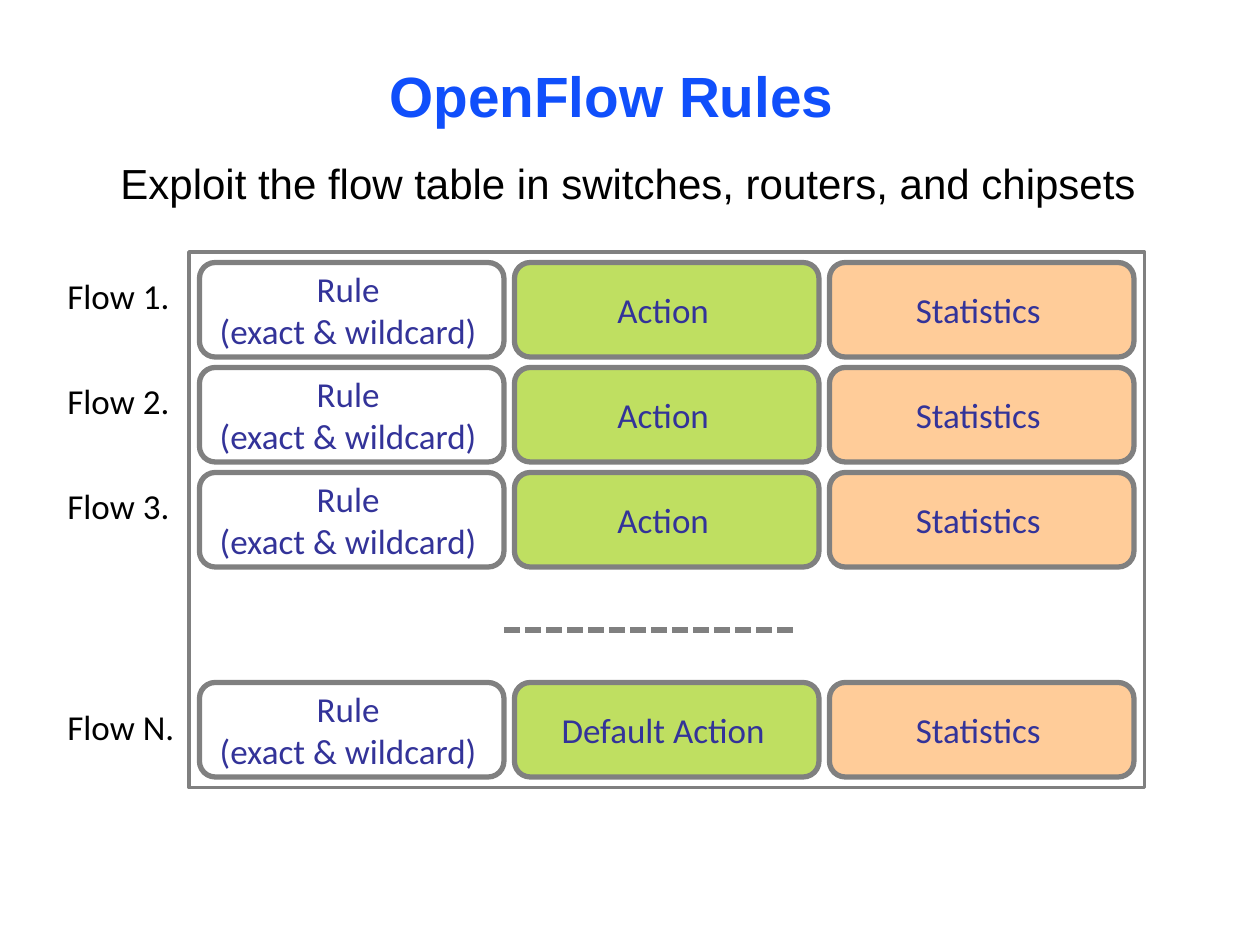
from lxml.etree import SubElement
from pptx import Presentation
from pptx.dml.color import RGBColor
from pptx.enum.dml import MSO_LINE
from pptx.enum.shapes import MSO_CONNECTOR, MSO_SHAPE
from pptx.enum.text import MSO_ANCHOR, PP_ALIGN
from pptx.oxml.ns import qn
from pptx.util import Pt

GREY, INDIGO, BLACK = "808080", "333399", "000000"
CELL_FORMATS = [("FFFFFF", None), ("99CC00", 62), ("FFCC99", None)]
RULE, STATISTICS = "Rule\n(exact & wildcard)", "Statistics"
FLOWS = [
    (0, "Flow 1.", "Action", 7),
    (1, "Flow 2.", "Action", 7),
    (2, "Flow 3.", "Action", 7),
    (4, "Flow N.", "Default Action", 13),
]
HEADING = {"name": "Arial", "size": Pt(32.4), "bold": True}
SUBHEADING = {"name": "Arial", "size": Pt(24)}
LABEL = {"name": "Calibri", "size": Pt(20)}


def paint(color_format, color):
    """Set a colour format from a hex string."""
    color_format.rgb = RGBColor.from_string(color)


def write(shape, text, font, color, insets, align=PP_ALIGN.CENTER,
          anchor=MSO_ANCHOR.TOP, wrap=True, before=0):
    """Fill a shape with formatted paragraphs, one per line of text."""
    frame = shape.text_frame
    frame.text = text
    sides = ("margin_left", "margin_top", "margin_right", "margin_bottom")
    settings = dict(zip(sides, map(Pt, insets)))
    settings |= {"word_wrap": wrap, "vertical_anchor": anchor}
    for key, value in settings.items():
        setattr(frame, key, value)
    for paragraph in frame.paragraphs:
        paragraph.alignment = align
        paragraph.space_before = Pt(before)
        for run in paragraph.runs:
            for key, value in font.items():
                setattr(run.font, key, value)
            paint(run.font.color, color)


def add_box(slide, kind, left, top, width, height, fill, line_width, opacity=None):
    """Add a grey-outlined shape, filled when a colour is given."""
    box = slide.shapes.add_shape(kind, Pt(left), Pt(top), Pt(width), Pt(height))
    box.shadow.inherit = False
    paint(box.line.fill_color if hasattr(box.line, "fill_color") else box.line.color, GREY)
    box.line.width = Pt(line_width)
    if fill is None:
        box.fill.background()
        return box
    box.fill.solid()
    paint(box.fill.fore_color, fill)
    if opacity:
        solid = box.fill._xPr.find(qn("a:solidFill"))
        SubElement(solid[0], qn("a:alpha"), val=str(opacity * 1000))
    return box


def add_heading(slide, left, top, width):
    """Place the title and the sentence below it."""
    title = slide.shapes.title
    place = {"left": left, "top": top, "width": width, "height": 21.6}
    for key, value in place.items():
        setattr(title, key, Pt(value))
    insets = (7, 4.5, 10, 4.5)
    write(title, "OpenFlow Rules", HEADING, "104FFB", insets, before=3)
    subtitle = slide.shapes.add_textbox(
        Pt(left + 6.5), Pt(top + 55.5), Pt(width + 6), Pt(37.5))
    write(subtitle, "Exploit the flow table in switches, routers, and chipsets",
          SUBHEADING, BLACK, insets, before=2)


def add_flow_table(slide, left, top, width, height, gap=6, rows=5):
    """Draw the framed grid of rules, actions and statistics."""
    add_box(slide, MSO_SHAPE.RECTANGLE, left, top, width, height, None, 2)
    columns = len(CELL_FORMATS)
    column_pitch = (width - gap) / columns
    row_pitch = (height - gap) / rows
    for row, _, action, _ in FLOWS:
        texts = (RULE, action, STATISTICS)
        for column, (text, (fill, opacity)) in enumerate(zip(texts, CELL_FORMATS)):
            cell = add_box(
                slide, MSO_SHAPE.ROUNDED_RECTANGLE,
                left + gap + column * column_pitch, top + gap + row * row_pitch,
                column_pitch - gap, row_pitch - gap, fill, 3, opacity)
            write(cell, text, LABEL, INDIGO, (3, 3, 7, 3),
                  anchor=MSO_ANCHOR.MIDDLE, wrap=False)
    add_dots(slide, left + column_pitch, top + 3.6 * row_pitch, 168)


def add_dots(slide, left, top, width):
    """Draw the dotted line that stands for the flows left out."""
    dots = slide.shapes.add_connector(
        MSO_CONNECTOR.STRAIGHT, Pt(left), Pt(top), Pt(left + width), Pt(top))
    paint(dots.line.color, GREY)
    dots.line.width = Pt(3)
    dots.line.dash_style = MSO_LINE.SQUARE_DOT
    SubElement(dots._element.spPr, qn("a:effectLst"))


def add_flow_labels(slide, left, top, width, row_pitch):
    """Name each flow beside its row."""
    for row, name, _, drop in FLOWS:
        label = slide.shapes.add_textbox(
            Pt(left), Pt(top + row * row_pitch + drop), Pt(width), Pt(24.5))
        write(label, name, LABEL, BLACK, (3, 0, 3, 0),
              align=PP_ALIGN.LEFT, wrap=False)


def main():
    """Build and save the slide."""
    deck = Presentation()
    deck.slide_width, deck.slide_height = Pt(720), Pt(540)
    slide = deck.slides.add_slide(deck.slide_layouts[5])
    add_heading(slide, 18, 30, 666)
    add_flow_table(slide, 108, 144, 546, 306)
    add_flow_labels(slide, 35.5, 150, 70, 60)
    deck.save("out.pptx")


if __name__ == "__main__":
    main()
